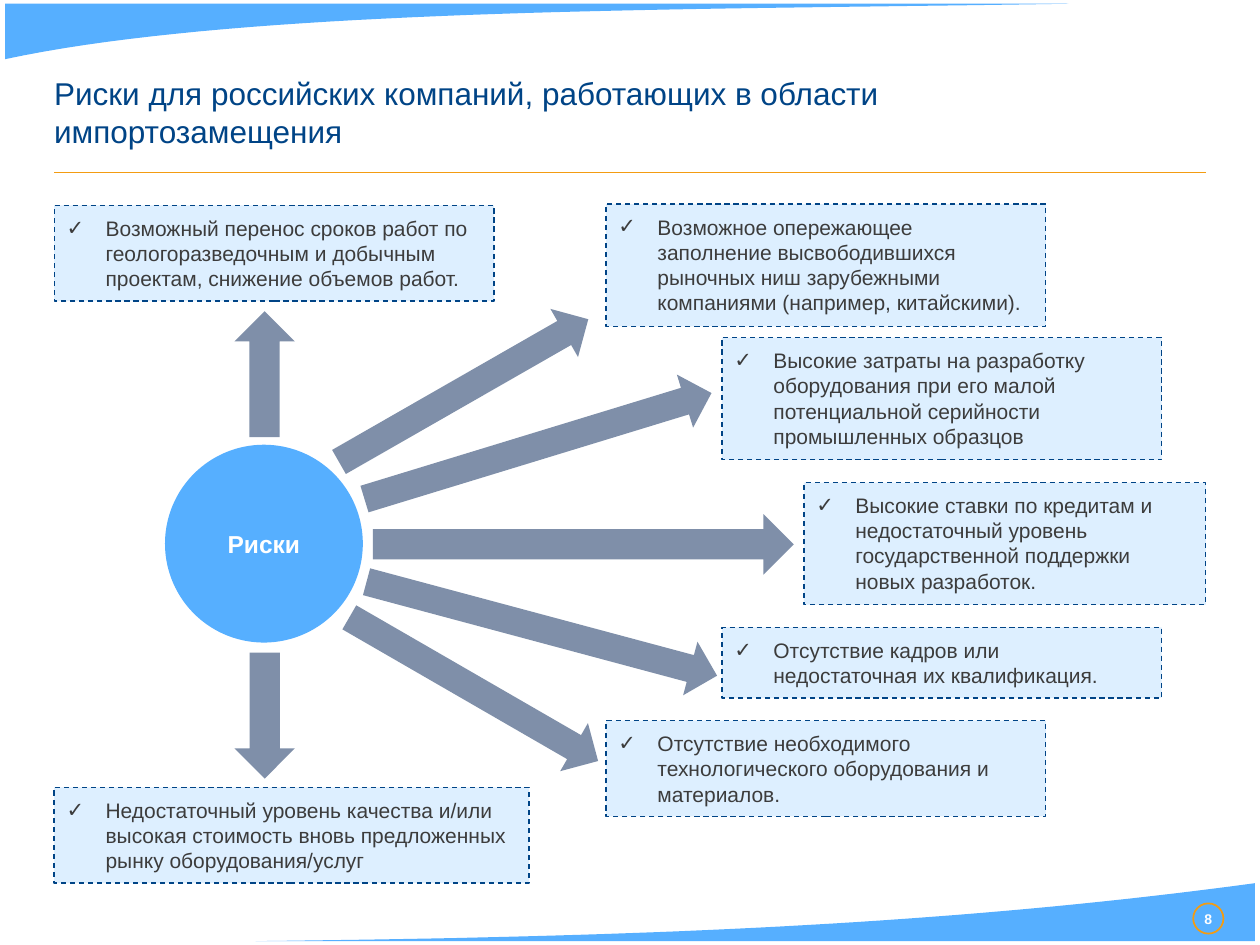
from lxml import etree
from pptx import Presentation
from pptx import util as u
from pptx.dml.color import RGBColor
from pptx.enum import dml, shapes, text
from pptx.oxml import ns

BLUE, NAVY, ORANGE, PALE, SLATE = "56AFFF", "004486", "F39C12", "DDEFFF", "7F8FA9"
WHITE, INK = "FFFFFF", "3C3C3C"

RISKS = [
    (0.43, 6.25, 3.77, 0.76, "Недостаточный уровень качества и/или высокая стоимость "
     "вновь предложенных рынку оборудования/услуг"),
    (4.81, 5.72, 3.49, 0.76, "Отсутствие необходимого технологического оборудования и материалов."),
    (5.73, 4.98, 3.49, 0.56, "Отсутствие кадров или недостаточная их квалификация."),
    (6.38, 3.83, 3.19, 0.97, "Высокие ставки по кредитам и недостаточный уровень "
     "государственной поддержки новых разработок."),
    (5.73, 2.68, 3.49, 0.97, "Высокие затраты на разработку оборудования при его малой "
     "потенциальной серийности промышленных образцов"),
    (4.81, 1.62, 3.49, 0.97, "Возможное опережающее заполнение высвободившихся рыночных ниш "
     "зарубежными компаниями (например, китайскими)."),
    (0.43, 1.63, 3.49, 0.76, "Возможный перенос сроков работ по геологоразведочным и добычным "
     "проектам, снижение объемов работ."),
]

# centre x, centre y, length, thickness, rotation
ARROWS = [
    (2.1, 2.97, 1, 0.48, 270),
    (3.68, 3.1, 2.28, 0.44, 330.2),
    (4.27, 3.54, 2.88, 0.44, 343),
    (2.1, 5.68, 1, 0.48, 90),
    (3.76, 5.47, 2.28, 0.44, 30),
    (4.63, 4.32, 3.34, 0.48, 0),
    (4.3, 4.99, 2.88, 0.44, 15),
]


def color(value):
    """Turn a hex string into a colour."""
    return RGBColor.from_string(value)


def paint(shape, fill, line=None, width=1):
    """Give a shape a flat fill and an optional outline."""
    shape.shadow.inherit = False
    shape.fill.solid()
    shape.fill.fore_color.rgb = color(fill)
    if line:
        shape.line.color.rgb = color(line)
        shape.line.width = u.Pt(width)
    else:
        shape.line.fill.background()


def add_shape(page, kind, left, top, width, height, fill, line=None, weight=1):
    """Add a painted preset shape."""
    shape = page.shapes.add_shape(kind, *map(u.Inches, (left, top, width, height)))
    paint(shape, fill, line, weight)
    return shape


def write(shape, content, size, ink, align, anchor, margins, bold=False):
    """Write one formatted paragraph into a shape and return it."""
    frame = shape.text_frame
    frame.word_wrap = True
    frame.vertical_anchor = anchor
    (frame.margin_left, frame.margin_top,
     frame.margin_right, frame.margin_bottom) = map(u.Inches, margins)
    para = frame.paragraphs[0]
    para.text = content
    para.alignment = align
    para.font.name = "Arial"
    para.font.size = u.Pt(size)
    para.font.bold = bold
    para.font.color.rgb = color(ink)
    return para


def add_check(para):
    """Give a paragraph a check mark bullet with a hanging indent."""
    props = para._p.get_or_add_pPr()
    props.set("marL", str(u.Inches(0.31)))
    props.set("indent", str(-u.Inches(0.31)))
    for tag, values in (("a:buFont", {"typeface": "Arial"}), ("a:buChar", {"char": "✓"})):
        bullet = etree.Element(ns.qn(tag), values)
        props.insert_element_before(bullet, "a:tabLst", "a:defRPr", "a:extLst")


def add_swoosh(page, corner, curve):
    """Fill the area between a page corner and a cubic curve."""
    steps = 40
    points = []
    for step in range(steps + 1):
        t = step / steps
        weights = ((1 - t) ** 3, 3 * t * (1 - t) ** 2, 3 * t * t * (1 - t), t ** 3)
        points.append([u.Inches(sum(w * point[axis] for w, point in zip(weights, curve)))
                       for axis in (0, 1)])
    builder = page.shapes.build_freeform(*map(u.Inches, corner))
    builder.add_line_segments(points, close=True)
    paint(builder.convert_to_shape(), BLUE)


def add_rule(page, left, right, top):
    """Draw the line under the title."""
    rule = page.shapes.add_connector(
        shapes.MSO_CONNECTOR.STRAIGHT, *map(u.Inches, (left, top, right, top)))
    rule.line.color.rgb = color(ORANGE)
    rule.line.width = u.Pt(1)
    etree.SubElement(rule._element.spPr, ns.qn("a:effectLst"))


def add_title(page, content):
    """Place and format the title."""
    title = page.shapes.title
    title.left, title.top, title.width, title.height = map(u.Inches, (0.43, 0.59, 8.08, 0.59))
    write(title, content, 18, NAVY, text.PP_ALIGN.LEFT, text.MSO_ANCHOR.MIDDLE,
          (0, 0.05, 0.1, 0.05))
    title.text_frame.auto_size = text.MSO_AUTO_SIZE.NONE


def add_risk(page, left, top, width, height, content):
    """Add a dashed box with one checked risk."""
    box = add_shape(page, shapes.MSO_SHAPE.RECTANGLE, left, top, width, height,
                    PALE, NAVY, 0.75)
    box.line.dash_style = dml.MSO_LINE.DASH
    para = write(box, content, 12, INK, text.PP_ALIGN.LEFT, text.MSO_ANCHOR.TOP,
                 (0.1, 0.08, 0.12, 0.08))
    para.space_after = u.Pt(6)
    add_check(para)


def add_disc(page, left, top, size, content, points, line=None):
    """Add a blue circle with a bold white label."""
    disc = add_shape(page, shapes.MSO_SHAPE.OVAL, left, top, size, size, BLUE, line)
    write(disc, content, points, WHITE, text.PP_ALIGN.CENTER, text.MSO_ANCHOR.MIDDLE,
          (0, 0, 0, 0), bold=True)


def add_arrow(page, x, y, length, thickness, angle):
    """Add a block arrow turned about its centre."""
    arrow = add_shape(page, shapes.MSO_SHAPE.RIGHT_ARROW, x - length / 2,
                      y - thickness / 2, length, thickness, SLATE)
    arrow.rotation = angle


def main():
    """Build the slide on risks."""
    deck = Presentation()
    deck.slide_width, deck.slide_height = u.Inches(10), u.Inches(7.5)
    page = deck.slides.add_slide(deck.slide_layouts[5])
    add_swoosh(page, (0.04, 0.03), [(8.48, 0.03), (5.67, 0.08), (2, 0.05), (0.04, 0.47)])
    add_swoosh(page, (9.96, 7.47), [(2.03, 7.47), (4.69, 7.44), (7.32, 7.37), (9.96, 7.01)])
    add_rule(page, 0.43, 9.57, 1.37)
    add_disc(page, 9.47, 7.17, 0.24, "8", 8, ORANGE)
    add_title(page, "Риски для российских компаний, работающих в области импортозамещения")
    for risk in RISKS:
        add_risk(page, *risk)
    add_disc(page, 1.31, 3.53, 1.57, "Риски", 14)
    for arrow in ARROWS:
        add_arrow(page, *arrow)
    deck.save("out.pptx")


if __name__ == "__main__":
    main()
